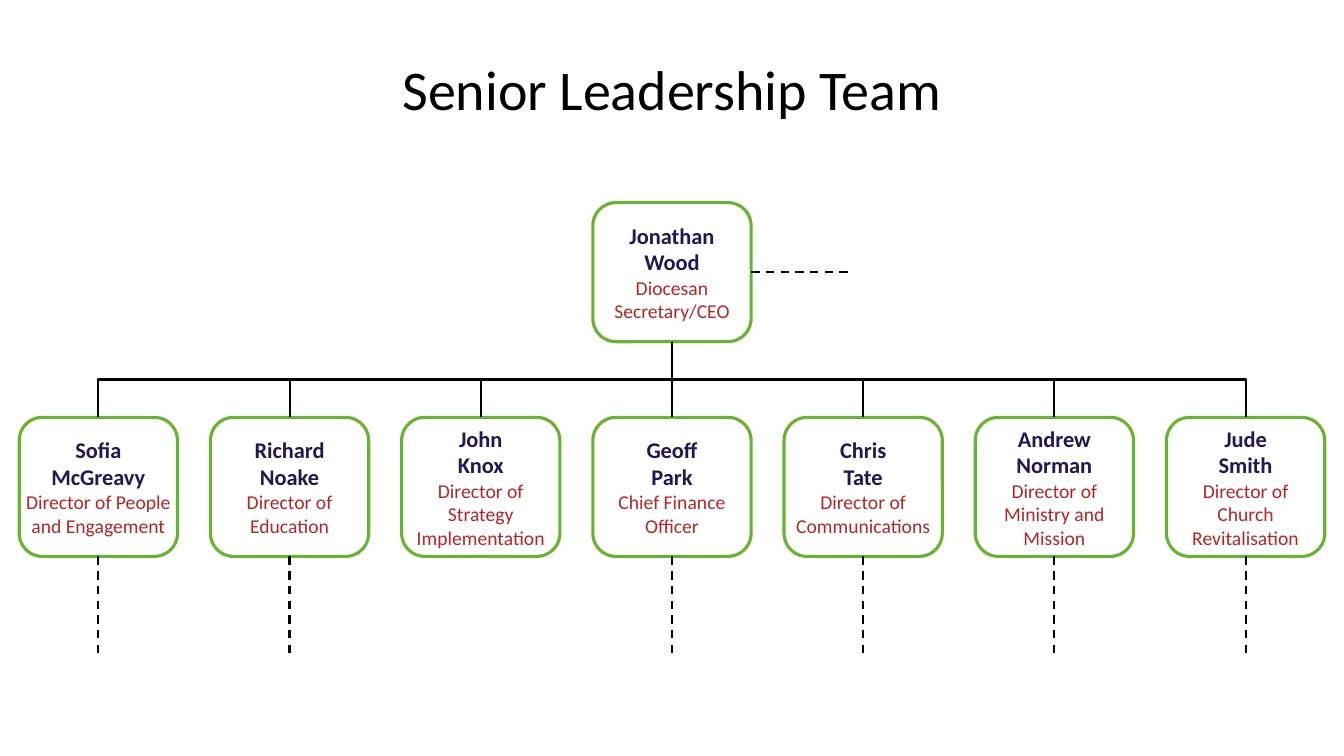
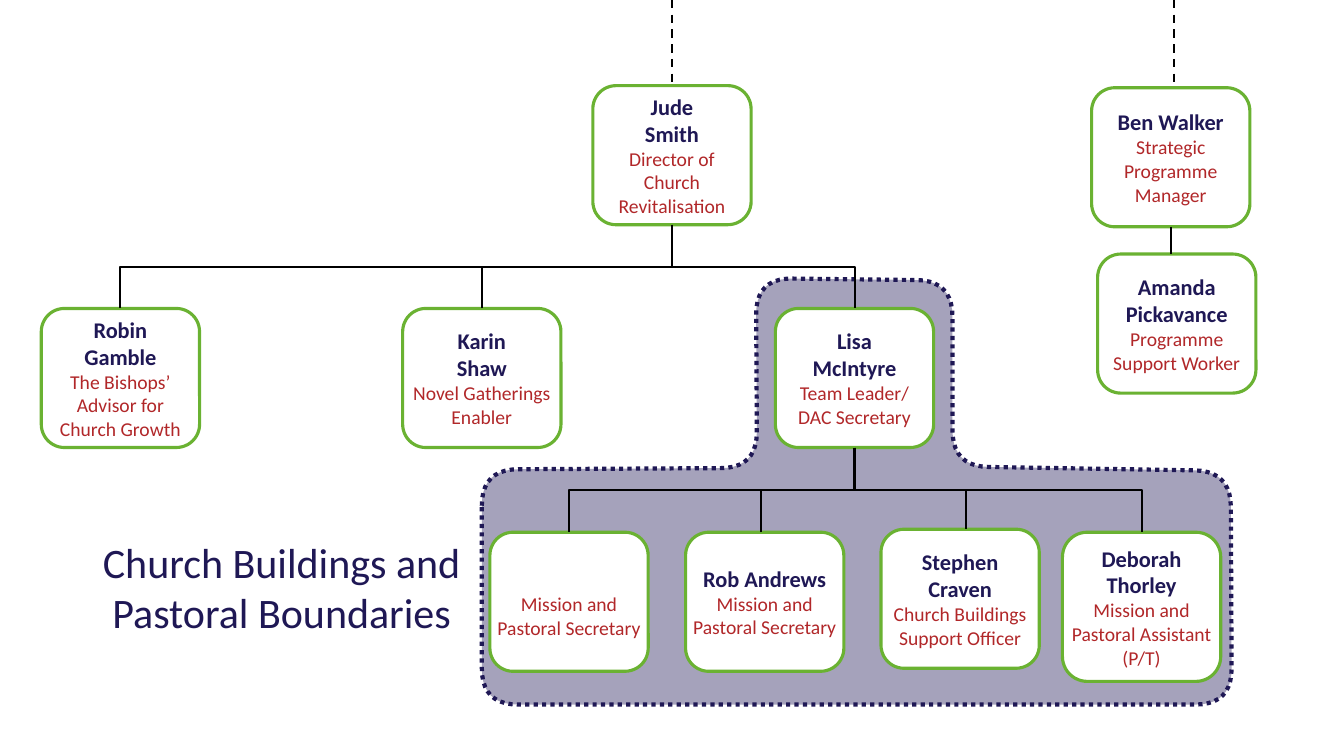
from dataclasses import dataclass

from lxml.etree import SubElement
from pptx import Presentation
from pptx.dml.color import RGBColor
from pptx.enum.dml import MSO_LINE
from pptx.enum.shapes import MSO_CONNECTOR, MSO_SHAPE
from pptx.enum.text import MSO_ANCHOR, PP_ALIGN
from pptx.oxml.ns import qn
from pptx.shapes.autoshape import Shape
from pptx.shapes.connector import Connector
from pptx.slide import Slide
from pptx.text.text import TextFrame
from pptx.util import Inches, Pt

NAVY = RGBColor(0x1F, 0x18, 0x55)
RED = RGBColor(0xB1, 0x27, 0x29)
GREEN = RGBColor(0x6A, 0xB2, 0x32)
BLACK = RGBColor(0, 0, 0)
WHITE = RGBColor(0xFF, 0xFF, 0xFF)

SLIDE_WIDTH, SLIDE_HEIGHT = Inches(13.333), Inches(7.5)
FONT = "Calibri"
NAME_FORMAT = {"name": FONT, "size": Pt(16), "bold": True}
ROLE_FORMAT = {"name": FONT, "size": Pt(14), "bold": False}
CARD_FRAME = {
    "margin_left": 0, "margin_right": 0, "margin_top": 0, "margin_bottom": 0,
    "vertical_anchor": MSO_ANCHOR.MIDDLE, "word_wrap": True,
}

# Lengths are percentages of the slide's width or height.
CARD_WIDTH, CARD_HEIGHT = 11.78, 18.4
TEAM_SIZE, TEAM_MARGIN = 7, 1.43
TEAM_PITCH = (100 - 2 * TEAM_MARGIN - CARD_WIDTH) / (TEAM_SIZE - 1)
CEO_TOP, TEAM_TOP = 26.8, 55.2
STUB_DOWN, STUB_ACROSS = 13.07, 7.35
TOP, BOTTOM = 0, 2  # connection sites of a card

CORNER_RADIUS, CORNER_STEPS = Inches(0.36), 10
BOUNDARY = [
    (35.85, 62.1), (56.33, 61.9), (56.25, 36.8), (70.87, 37.1),
    (70.87, 61.7), (91.57, 62.3), (91.65, 93.2), (35.85, 93.2),
]


@dataclass(frozen=True)
class Post:
    """A person's card, placed by its centre line and top edge."""
    names: tuple[str, ...]
    roles: tuple[str, ...]
    centre: float
    top: float
    height: float = CARD_HEIGHT


@dataclass(frozen=True)
class Heading:
    text: str
    left: float
    top: float
    width: float
    height: float
    size: int
    colour: RGBColor


def across(share: float) -> int:
    return round(SLIDE_WIDTH * share / 100)


def down(share: float) -> int:
    return round(SLIDE_HEIGHT * share / 100)


def set_all(target: object, values: dict) -> None:
    for attribute, value in values.items():
        setattr(target, attribute, value)


def write(frame: TextFrame, lines: list[tuple[str, dict, RGBColor]]) -> None:
    """Fill a frame with centred paragraphs."""
    for index, (text, font_format, colour) in enumerate(lines):
        paragraph = frame.add_paragraph() if index else frame.paragraphs[0]
        paragraph.alignment = PP_ALIGN.CENTER
        run = paragraph.add_run()
        run.text = text
        set_all(run.font, font_format)
        run.font.color.rgb = colour


def add_heading(slide: Slide, heading: Heading) -> None:
    box = slide.shapes.add_textbox(across(heading.left), down(heading.top),
                                   across(heading.width), down(heading.height))
    box.text_frame.word_wrap = True
    font_format = {"name": FONT, "size": Pt(heading.size)}
    write(box.text_frame, [(heading.text, font_format, heading.colour)])


def add_card(slide: Slide, post: Post) -> Shape:
    card = slide.shapes.add_shape(
        MSO_SHAPE.FLOWCHART_ALTERNATE_PROCESS,
        across(post.centre - CARD_WIDTH / 2), down(post.top),
        across(CARD_WIDTH), down(post.height))
    card.shadow.inherit = False
    card.fill.solid()
    card.fill.fore_color.rgb = WHITE
    card.line.color.rgb = GREEN
    card.line.width = Pt(2.25)
    set_all(card.text_frame, CARD_FRAME)
    if not post.names:  # a vacant post keeps the room of one name line
        card.text_frame.margin_top = Pt(19.5)
    write(card.text_frame,
          [(name, NAME_FORMAT, NAVY) for name in post.names]
          + [(role, ROLE_FORMAT, RED) for role in post.roles])
    return card


def style_connector(connector: Connector, dashed: bool = False) -> None:
    connector.line.color.rgb = BLACK
    connector.line.width = Pt(1.5)
    if dashed:
        connector.line.dash_style = MSO_LINE.DASH
    SubElement(connector._element.spPr, qn("a:effectLst"))


def add_line(slide: Slide, x1: float, y1: float, x2: float, y2: float,
             dashed: bool = False) -> None:
    line = slide.shapes.add_connector(
        MSO_CONNECTOR.STRAIGHT, across(x1), down(y1), across(x2), down(y2))
    style_connector(line, dashed)


def link(slide: Slide, manager: Shape, report: Shape) -> None:
    """Join a manager's bottom edge to a report's top edge."""
    x1, y1 = manager.left + manager.width // 2, manager.top + manager.height
    x2, y2 = report.left + report.width // 2, report.top
    straight = abs(x2 - x1) < Inches(0.1)
    kind = MSO_CONNECTOR.STRAIGHT if straight else MSO_CONNECTOR.ELBOW
    connector = slide.shapes.add_connector(kind, x1, y1, x2, y2)
    connector.begin_connect(manager, BOTTOM)
    connector.end_connect(report, TOP)
    if not straight:  # turn the elbow so that it leaves downwards
        drop, reach = y2 - y1, abs(x2 - x1)
        set_all(connector, {
            "left": (x1 + x2 - drop) // 2, "top": (y1 + y2 - reach) // 2,
            "width": drop, "height": reach})
        rightwards = x2 > x1
        set_all(connector._element.spPr.xfrm, {
            "rot": 270 if rightwards else 90,
            "flipH": rightwards, "flipV": False})
    style_connector(connector)


def rounded(corners: list[tuple[int, int]]) -> list[tuple[int, int]]:
    """Replace every corner of an outline by a short curve."""
    points = []
    for index, (x, y) in enumerate(corners):
        ends = []
        for nx, ny in (corners[index - 1], corners[(index + 1) % len(corners)]):
            share = CORNER_RADIUS / ((nx - x) ** 2 + (ny - y) ** 2) ** 0.5
            ends.append((x + (nx - x) * share, y + (ny - y) * share))
        (ax, ay), (bx, by) = ends
        for step in range(CORNER_STEPS + 1):
            t = step / CORNER_STEPS
            a, c, b = (1 - t) ** 2, 2 * t * (1 - t), t ** 2
            points.append((round(a * ax + c * x + b * bx),
                           round(a * ay + c * y + b * by)))
    return points


def add_boundary(slide: Slide) -> None:
    start, *rest = rounded([(across(x), down(y)) for x, y in BOUNDARY])
    builder = slide.shapes.build_freeform(*start)
    builder.add_line_segments(rest, close=True)
    boundary = builder.convert_to_shape()
    boundary.shadow.inherit = False
    boundary.fill.solid()
    boundary.fill.fore_color.rgb = NAVY
    tint = boundary._element.spPr.find(".//" + qn("a:srgbClr"))
    SubElement(tint, qn("a:alpha"), val="40000")
    boundary.line.color.rgb = NAVY
    boundary.line.width = Pt(3)
    boundary.line.dash_style = MSO_LINE.ROUND_DOT


def build_leadership(slide: Slide) -> None:
    ceo = add_card(slide, Post(("Jonathan", "Wood"),
                               ("Diocesan Secretary/CEO",), 50, CEO_TOP))
    team = [
        (("Sofia McGreavy",), "Director of People and Engagement", True),
        (("Richard", "Noake"), "Director of Education", True),
        (("John", "Knox"), "Director of Strategy Implementation", False),
        (("Geoff", "Park"), "Chief Finance Officer", True),
        (("Chris", "Tate"), "Director of Communications", True),
        (("Andrew", "Norman"), "Director of Ministry and Mission", True),
        (("Jude", "Smith"), "Director of Church Revitalisation", True),
    ]
    team_bottom = TEAM_TOP + CARD_HEIGHT
    for column, (names, role, has_staff) in enumerate(team):
        centre = TEAM_MARGIN + CARD_WIDTH / 2 + column * TEAM_PITCH
        link(slide, ceo, add_card(slide, Post(names, (role,), centre, TEAM_TOP)))
        if has_staff:
            add_line(slide, centre, team_bottom,
                     centre, team_bottom + STUB_DOWN, dashed=True)
    ceo_side, ceo_middle = 50 + CARD_WIDTH / 2, CEO_TOP + CARD_HEIGHT / 2
    add_line(slide, ceo_side, ceo_middle,
             ceo_side + STUB_ACROSS, ceo_middle, dashed=True)
    add_heading(slide, Heading("Senior Leadership Team",
                               23.93, 6.53, 52.13, 10.27, 40, BLACK))


def build_buildings(slide: Slide) -> None:
    add_boundary(slide)
    secretary = ("Mission and Pastoral Secretary",)
    posts = {
        "director": Post(("Jude", "Smith"),
                         ("Director of Church Revitalisation",), 50, 11.33),
        "leader": Post(("Lisa", "McIntyre"),
                       ("Team Leader/", "DAC Secretary"), 63.58, 40.8),
        "advisor": Post(("Robin", "Gamble"),
                        ("The Bishops’ Advisor for Church Growth",), 8.96, 40.8),
        "enabler": Post(("Karin", "Shaw"),
                        ("Novel Gatherings Enabler",), 35.85, 40.8),
        "vacancy": Post((), secretary, 42.34, 70.4),
        "secretary": Post(("Rob Andrews",), secretary, 56.9, 70.4),
        "support": Post(("Stephen", "Craven"),
                        ("Church Buildings Support Officer",), 71.44, 70),
        "assistant": Post(("Deborah", "Thorley"),
                          ("Mission and Pastoral Assistant (P/T)",),
                          84.94, 70.4, 19.73),
        "programme": Post(("Ben Walker",),
                          ("Strategic Programme Manager",), 87.11, 11.6),
        "worker": Post(("Amanda Pickavance",),
                       ("Programme Support Worker",), 87.56, 33.6),
    }
    cards = {key: add_card(slide, post) for key, post in posts.items()}
    reports = {
        "director": ("advisor", "enabler", "leader"),
        "leader": ("vacancy", "assistant"),
    }
    for manager, team in reports.items():
        for report in team:
            link(slide, cards[manager], cards[report])
    for x, y1, y2, dashed in (
            (56.63, 64.8, 70.4, False), (71.9, 64.8, 70, False),
            (87.11, 30, 33.6, False),
            (50, 0, 11.33, True), (87.38, 0, 11.6, True)):
        add_line(slide, x, y1, x, y2, dashed)
    add_heading(slide, Heading("Church Buildings and Pastoral Boundaries",
                               4.65, 70.27, 32.63, 14.8, 30, NAVY))


def main() -> None:
    deck = Presentation()
    deck.slide_width, deck.slide_height = SLIDE_WIDTH, SLIDE_HEIGHT
    blank = deck.slide_layouts[6]
    for build in (build_leadership, build_buildings):
        build(deck.slides.add_slide(blank))
    deck.save("out.pptx")


if __name__ == "__main__":
    main()
